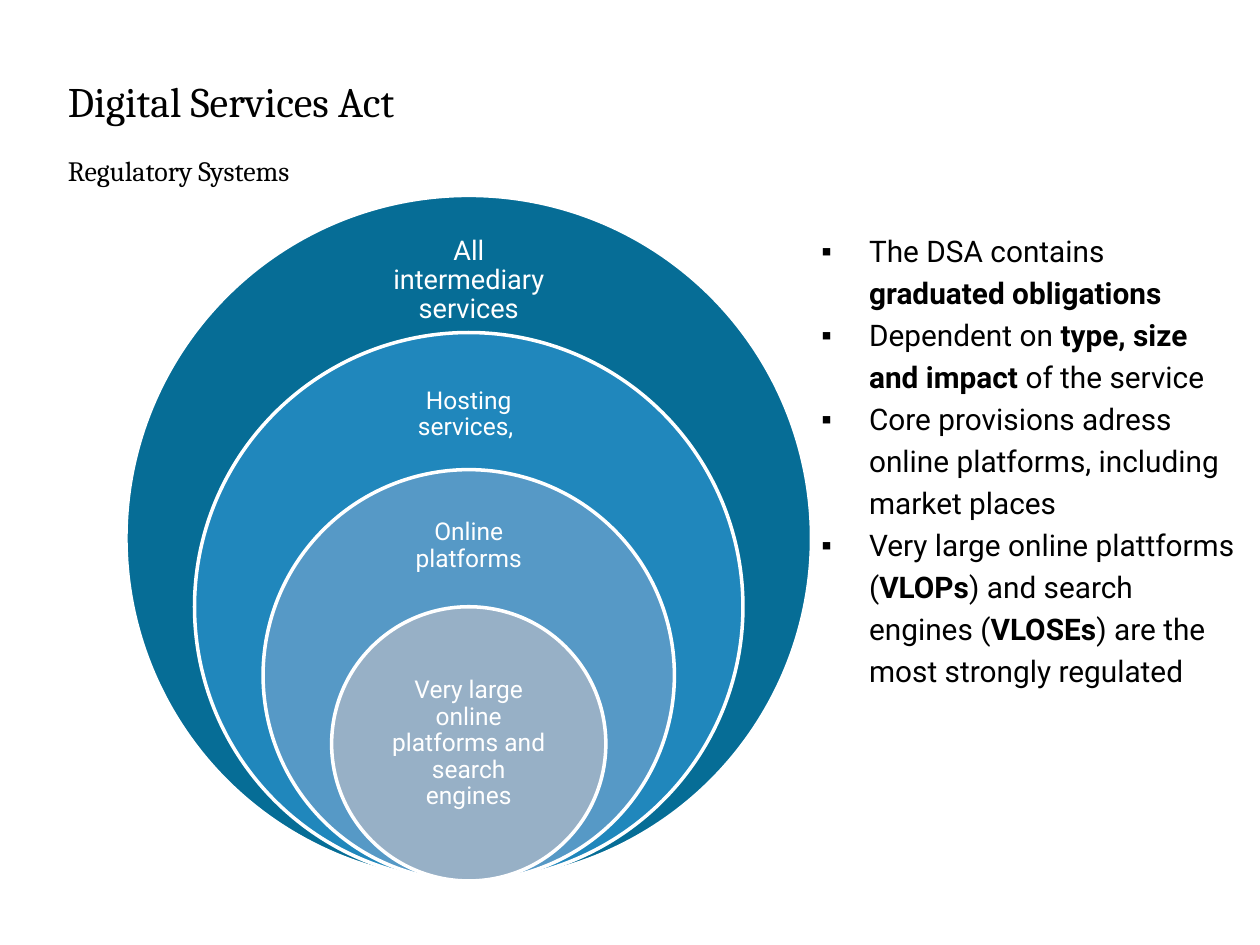
"""Build the Digital Services Act slide with nested circles and key points."""
from dataclasses import dataclass

import pptx
import pptx.dml.color
import pptx.enum.shapes
import pptx.enum.text
import pptx.oxml
import pptx.oxml.ns
import pptx.util

Cm = pptx.util.Cm
Pt = pptx.util.Pt
Align = pptx.enum.text.PP_ALIGN
Anchor = pptx.enum.text.MSO_ANCHOR


@dataclass(frozen=True)
class Theme:
    ink: str = "000000"
    white: str = "FFFFFF"
    blues: tuple = ("066D96", "2087BC", "5699C6", "97B0C6")
    serif: str = "Cambria"
    sans: str = "Roboto"
    title: float = 24
    sub: float = 16
    body: float = 17
    large: float = 15.5
    small: float = 14


THEME = Theme()
MID, BASE, SIZE = 9.45, 17.76, 13.82
RINGS = (
    ("All intermediary services", THEME.large, 4.62, 2.08),
    ("Hosting services, ", THEME.small, 7.37, 1.98),
    ("Online platforms", THEME.small, 10.08, 1.85),
    ("Very large online platforms and search engines", THEME.small, 13.61, 2.77),
)
POINTS = (
    "The DSA contains *graduated obligations*",
    "Dependent on *type, size and impact *of the service",
    "Core provisions adress online platforms, including market places",
    "Very large online plattforms (*VLOPs*) and search engines (*VLOSEs*)"
    " are the most strongly regulated",
)


def rgb(code):
    """Turn a hex code into a colour."""
    return pptx.dml.color.RGBColor.from_string(code)


def mark(para, sign, indent):
    """Give a paragraph a hanging bullet."""
    props = para._p.get_or_add_pPr()
    props.set("marL", str(Cm(indent)))
    props.set("indent", str(-Cm(indent)))
    space = pptx.oxml.ns.nsdecls("a")
    props.append(pptx.oxml.parse_xml(f'<a:buFont {space} typeface="Arial"/>'))
    props.append(pptx.oxml.parse_xml(f'<a:buChar {space} char="{sign}"/>'))


def write(para, text, *, size, font, color, align=Align.LEFT, lead=None):
    """Write text into a paragraph, with starred parts in bold."""
    para.alignment = align
    para.line_spacing = lead
    for i, part in enumerate(text.split("*")):
        if part:
            run = para.add_run()
            run.text = part
            run.font.size = Pt(size)
            run.font.name = font
            run.font.color.rgb = rgb(color)
            run.font.bold = i % 2 == 1


def setup(shape, inset=0, anchor=Anchor.TOP):
    """Set the margins and anchor of a text frame and return it."""
    frame = shape.text_frame
    frame.word_wrap = True
    frame.auto_size = pptx.enum.text.MSO_AUTO_SIZE.NONE
    frame.vertical_anchor = anchor
    frame.margin_left = frame.margin_right = Cm(inset)
    frame.margin_top = frame.margin_bottom = Cm(inset)
    return frame


def head(slide):
    """Place the title and its subtitle line."""
    title = slide.shapes.title
    title.left, title.top = Cm(1.37), Cm(1.3)
    title.width, title.height = Cm(15.54), Cm(2.64)
    para = setup(title).paragraphs[0]
    style = dict(font=THEME.serif, color=THEME.ink, lead=Pt(35))
    write(para, "Digital Services Act", size=THEME.title, **style)
    para.add_line_break()
    write(para, "Regulatory Systems", size=THEME.sub, **style)


def points(slide):
    """Add the bulleted key points."""
    box = slide.shapes.add_textbox(Cm(16.56), Cm(4.57), Cm(8.35), Cm(11.35))
    frame = setup(box)
    for i, text in enumerate(POINTS):
        para = frame.add_paragraph() if i else frame.paragraphs[0]
        mark(para, "▪", 0.96)
        write(para, text, size=THEME.body, font=THEME.sans, color=THEME.ink, lead=Pt(24))


def ring(shapes, size, fill):
    """Add a circle that rests on the shared base."""
    oval = shapes.add_shape(
        pptx.enum.shapes.MSO_SHAPE.OVAL,
        Cm(MID - size / 2), Cm(BASE - size), Cm(size), Cm(size))
    oval.shadow.inherit = False
    oval.fill.solid()
    oval.fill.fore_color.rgb = rgb(fill)
    oval.line.color.rgb = rgb(THEME.white)
    oval.line.width = Pt(2)


def label(shapes, text, size, top, height):
    """Add a centred circle label."""
    width = 3.88
    box = shapes.add_textbox(Cm(MID - width / 2), Cm(top), Cm(width), Cm(height))
    para = setup(box, 0.28, Anchor.MIDDLE).paragraphs[0]
    write(para, text, size=size, font=THEME.sans, color=THEME.white,
          align=Align.CENTER, lead=0.9)


def nest(slide):
    """Add the group of nested circles, each a fifth smaller."""
    shapes = slide.shapes.add_group_shape().shapes
    for i, (item, fill) in enumerate(zip(RINGS, THEME.blues)):
        ring(shapes, SIZE * (5 - i) / 5, fill)
        label(shapes, *item)


def main():
    """Build and save the slide."""
    deck = pptx.Presentation()
    deck.slide_width, deck.slide_height = Cm(25.4), Cm(19.05)
    slide = deck.slides.add_slide(deck.slide_layouts[5])
    head(slide)
    points(slide)
    nest(slide)
    deck.save("out.pptx")


if __name__ == "__main__":
    main()
